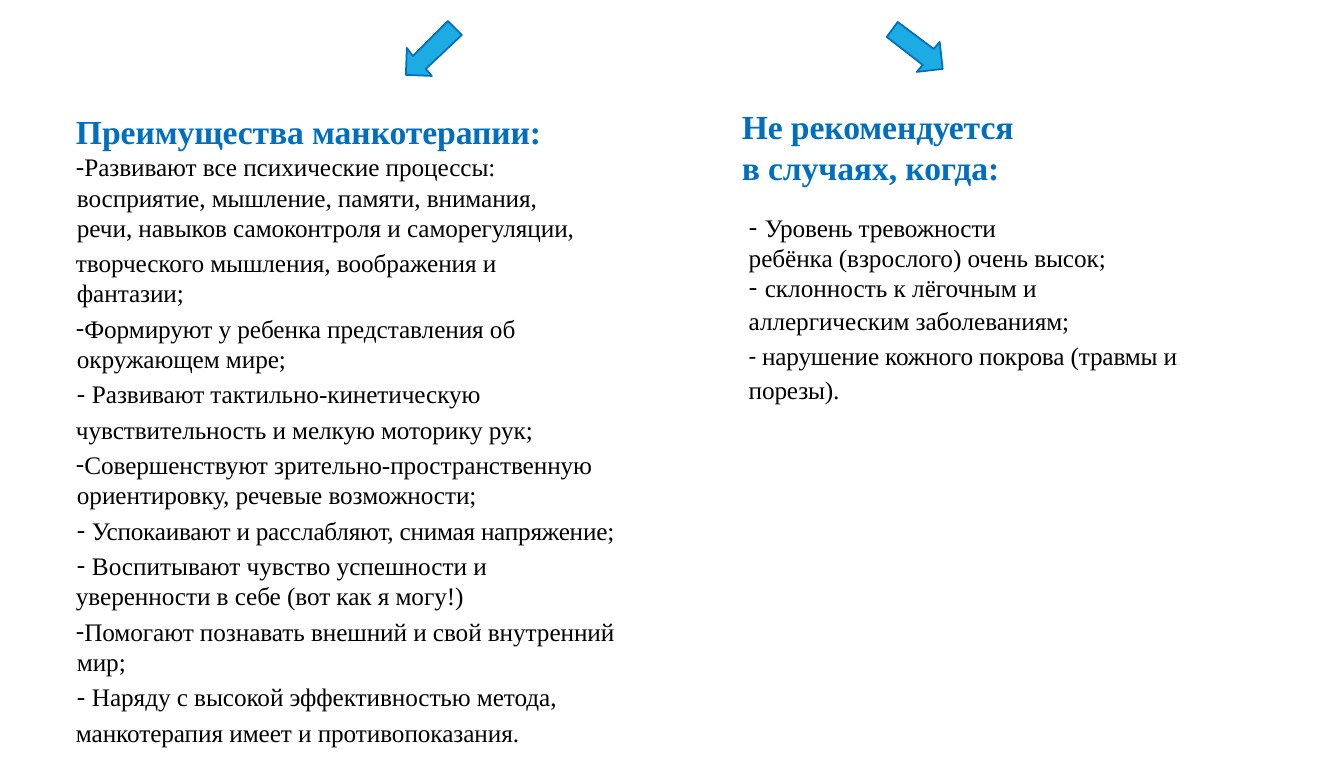
from pptx import Presentation
from pptx.dml.color import RGBColor
from pptx.oxml import parse_xml
from pptx.oxml.ns import nsdecls
from pptx.util import Emu, Inches, Pt

PX = 914400 // 101
FONT, DASH_FONT = "Times New Roman", "Calibri"
BLUE, SKY, BLACK = "006FC0", "1CACE3", "000000"
FLUSH = dict(margin=1, indent=-1)
HANGING = dict(margin=16, indent=-15, bullet=True)

LEFT_ARROW = [(42, 0), (7, 35), (1, 27), (0, 54), (26, 55), (20, 48), (56, 14)]
RIGHT_ARROW = [(11, 0), (0, 15), (36, 43), (30, 50), (56, 47), (53, 20), (47, 27)]

BENEFITS = [
    ("Развивают все психические процессы: восприятие, мышление, памяти, внимания, "
     "речи, навыков самоконтроля и саморегуляции,",
     dict(FLUSH, bullet=True, right=78, before=0.2)),
    ("творческого мышления, воображения и фантазии;", dict(FLUSH, right=78)),
    ("Формируют у ребенка представления об окружающем мире;",
     dict(FLUSH, bullet=True, right=78)),
    ("Развивают тактильно-кинетическую", HANGING),
    ("чувствительность и мелкую моторику рук;", FLUSH),
    ("Совершенствуют зрительно-пространственную ориентировку, речевые возможности;",
     dict(FLUSH, bullet=True, right=30)),
    ("Успокаивают и расслабляют, снимая напряжение;", dict(HANGING, tracking=-17)),
    ("Воспитывают чувство успешности и", dict(HANGING, tracking=0)),
    ("уверенности в себе (вот как я могу!)", dict(FLUSH, before=0.1)),
    ("Помогают познавать внешний и свой внутренний мир;",
     dict(FLUSH, bullet=True, right=30)),
    ("Наряду с высокой эффективностью метода,", HANGING),
    ("манкотерапия имеет и противопоказания.", FLUSH),
]

RISK_ITEM = dict(margin=17, indent=-16, bullet=True, before=0)
RISK_LINE = dict(margin=1, before=0)
RISKS = [
    ("Уровень тревожности", dict(RISK_ITEM, before=1.1, tracking=-10)),
    ("ребёнка (взрослого) очень высок;", RISK_LINE),
    ("склонность к лёгочным и", dict(RISK_ITEM, tracking=0)),
    ("аллергическим заболеваниям;", dict(RISK_LINE, line=23.8)),
    ("нарушение кожного покрова (травмы и порезы).",
     dict(RISK_LINE, lead="- ", line=24.5, before=0.1, tracking=-10)),
]


def px(length):
    return Emu(length * PX)


def color(value):
    return RGBColor.from_string(value)


def add_text_box(page, area, inset_x=0, inset_y=1):
    frame = page.shapes.add_textbox(*map(px, area)).text_frame
    frame.word_wrap = True
    frame.margin_left = frame.margin_right = px(inset_x)
    frame.margin_top = frame.margin_bottom = px(inset_y)
    return frame


def write(frame, text, lead="", size=18, ink=BLACK, bold=False, margin=0, indent=0,
          right=0, before=3.6, line=None, bullet=False, tracking=-5):
    first = frame.paragraphs[0]
    para = frame.add_paragraph() if first.runs else first
    para.space_before = Pt(before)
    if line:
        para.line_spacing = Pt(line)
    for words, font in ((lead, DASH_FONT), (text, FONT)):
        if words:
            span = para.add_run()
            span.text = words
            span.font.name, span.font.size, span.font.bold = font, Pt(size), bold
            span.font.color.rgb = color(ink)
            span._r.get_or_add_rPr().set("spc", str(tracking))

    # Indents and bullet
    props = para._p.get_or_add_pPr()
    for name, length in (("marL", margin), ("marR", right), ("indent", indent)):
        props.set(name, str(px(length)))
    if bullet:
        props.append(parse_xml(f'<a:buFont {nsdecls("a")} typeface="{FONT}"/>'))
        props.append(parse_xml(f'<a:buChar {nsdecls("a")} char="-"/>'))


def write_heading(frame, text, before=1):
    write(frame, text, size=24, ink=BLUE, bold=True, before=before, tracking=-8, **FLUSH)


def add_arrow(page, left, top, points):
    corners = [(left + x, top + y) for x, y in points]
    builder = page.shapes.build_freeform(*corners[0], scale=PX)
    builder.add_line_segments(corners[1:], close=True)
    arrow = builder.convert_to_shape()
    arrow.shadow.inherit = False
    arrow.fill.solid()
    arrow.fill.fore_color.rgb = color(SKY)
    arrow.line.color.rgb = color(BLUE)
    arrow.line.width = Pt(1.25)


def add_benefits(page, left, top, width, height):
    add_arrow(page, left + 330, top - 89, LEFT_ARROW)
    frame = add_text_box(page, (left, top, width, height))
    write_heading(frame, "Преимущества манкотерапии:")
    for text, style in BENEFITS:
        write(frame, text, **style)


def add_risks(page, left, top, width, height):
    add_arrow(page, left + 155, top - 79, RIGHT_ARROW)
    heading = add_text_box(page, (left, top, 420, 92), inset_x=10, inset_y=5)
    write_heading(heading, "Не рекомендуется")
    write_heading(heading, "в случаях, когда:", before=0.1)
    frame = add_text_box(page, (left + 16, top + 110, width - 16, height - 110))
    for text, style in RISKS:
        write(frame, text, **style)


def main():
    deck = Presentation()
    deck.slide_width, deck.slide_height = Inches(13.31), Inches(7.52)
    page = deck.slides.add_slide(deck.slide_layouts[6])
    add_benefits(page, 76, 110, 588, 623)
    add_risks(page, 732, 101, 480, 305)
    deck.save("out.pptx")


if __name__ == "__main__":
    main()
